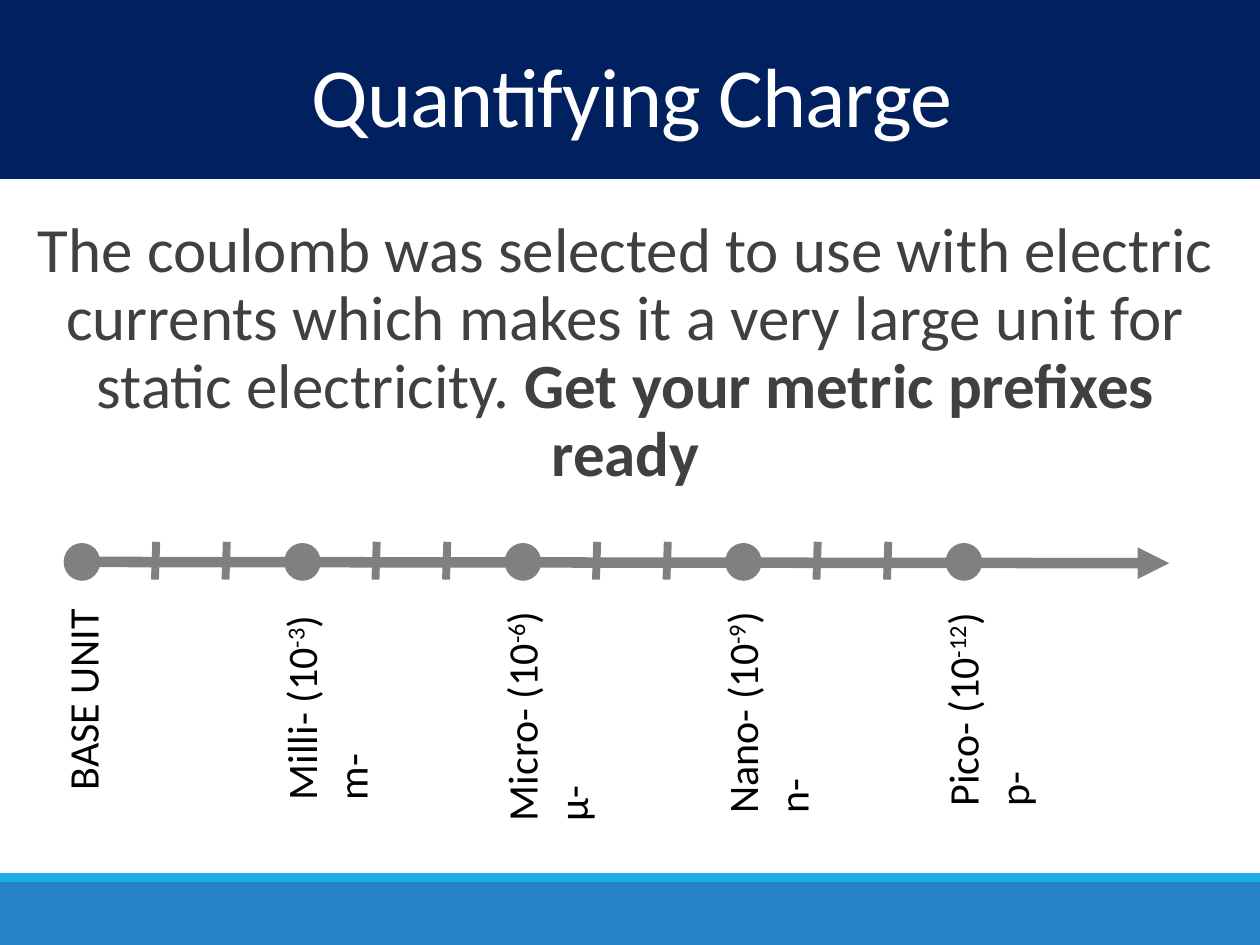
from lxml import etree
from pptx import Presentation
from pptx.dml.color import RGBColor
from pptx.enum.shapes import MSO_CONNECTOR, MSO_SHAPE
from pptx.enum.text import MSO_AUTO_SIZE, PP_ALIGN
from pptx.oxml.ns import qn
from pptx.util import Inches, Pt

RECT, OVAL = MSO_SHAPE.RECTANGLE, MSO_SHAPE.OVAL
LINE = MSO_CONNECTOR.STRAIGHT
CENTER = PP_ALIGN.CENTER
GROW = MSO_AUTO_SIZE.SHAPE_TO_FIT_TEXT

NAVY = RGBColor(0x00, 0x20, 0x60)
BLUE = RGBColor(0x26, 0x83, 0xC6)
CYAN = RGBColor(0x1C, 0xAD, 0xE4)
GRAY = RGBColor(0x80, 0x80, 0x80)
DARK = RGBColor(0x40, 0x40, 0x40)
BLACK = RGBColor(0x00, 0x00, 0x00)
WHITE = RGBColor(0xFF, 0xFF, 0xFF)

WIDE, HIGH = 10, 7.5
START, STEP = 0.65, 1.75      # first stop of the scale, gap between stops
AXIS = 4.46                   # height of the scale on the slide
DOT_W, DOT_H = 0.29, 0.3
TICKS = (0.58, 1.14)          # offsets of the ticks after each stop

# name, exponent, symbol, text length, middle of the label
UNITS = [
    ("Milli-", "-3", "m-", 1.68, 5.61),
    ("Micro-", "-6", "µ-", 1.89, 5.67),
    ("Nano-", "-9", "n-", 1.83, 5.64),
    ("Pico-", "-12", "p-", 1.78, 5.61),
]


def box(*sizes):
    return [Inches(size) for size in sizes]


def add_fill(slide, kind, color, *place):
    shape = slide.shapes.add_shape(kind, *box(*place))
    shape.shadow.inherit = False
    shape.fill.solid()
    shape.fill.fore_color.rgb = color
    shape.line.fill.background()


def add_line(slide, width, *ends):
    line = slide.shapes.add_connector(LINE, *box(*ends))
    line.line.color.rgb = GRAY
    line.line.width = Pt(width)
    etree.SubElement(line._element.spPr, qn("a:effectLst"))
    return line


def add_run(para, text, size, color, bold=None):
    run = para.add_run()
    run.text = text
    font = run.font
    font.name, font.size, font.bold = "Calibri", Pt(size), bold
    font.color.rgb = color
    return run


def add_text(slide, *place):
    shape = slide.shapes.add_textbox(*box(*place))
    shape.text_frame.word_wrap = True
    return shape


def add_title(slide):
    para = add_text(slide, 0.03, 0.42, 9.97, 0.84).text_frame.paragraphs[0]
    para.alignment, para.line_spacing = CENTER, 0.85
    run = add_run(para, "Quantifying Charge", 48, WHITE)
    run.font._element.set("spc", "-50")


def add_body(slide):
    frame = add_text(slide, 0.2, 1.68, 9.53, 1.47).text_frame
    frame.margin_left = frame.margin_right = 0
    para = frame.paragraphs[0]
    para.alignment, para.line_spacing = CENTER, 0.9
    para.space_before, para.space_after = Pt(12), Pt(2)
    add_run(para, "The coulomb was selected to use with electric currents "
            "which makes it a very large unit for static electricity. ",
            36, DARK)
    add_run(para, "Get your metric prefixes ready", 36, DARK, True)


def add_label(slide, mid_x, mid_y, width, height):
    """Add an upright label, given its middle and its size before turning."""
    shape = add_text(slide, mid_x - width / 2, mid_y - height / 2,
                     width, height)
    shape.rotation = 270
    frame = shape.text_frame
    frame.word_wrap = False
    frame.auto_size = GROW
    return frame


def add_unit(slide, stop, name, power, sign, width, mid):
    frame = add_label(slide, stop + 0.19, mid, width, 0.91)
    para = frame.paragraphs[0]
    add_run(para, f"{name} (10", 24, BLACK)
    high = add_run(para, power, 24, BLACK)
    high.font._element.set("baseline", "30000")
    add_run(para, ")", 24, BLACK)
    add_run(frame.add_paragraph(), sign, 24, BLACK)


def add_scale(slide):
    axis = add_line(slide, 6, START, AXIS, 9.28, AXIS + 0.01)
    etree.SubElement(axis.line._get_or_add_ln(), qn("a:tailEnd"),
                     type="triangle")
    stops = [START + STEP * i for i in range(len(UNITS) + 1)]
    for stop in stops:
        add_fill(slide, OVAL, GRAY, stop - DOT_W / 2, AXIS - DOT_H / 2,
                 DOT_W, DOT_H)
    for stop in stops[:-1]:
        for gap in TICKS:
            x = stop + gap
            add_line(slide, 4.5, x + 0.01, AXIS - 0.16, x, AXIS + 0.14)
    base = add_label(slide, START, 5.55, 1.64, 0.5)
    add_run(base.paragraphs[0], "BASE UNIT", 24, BLACK)
    for stop, unit in zip(stops[1:], UNITS):
        add_unit(slide, stop, *unit)


def main():
    deck = Presentation()
    deck.slide_width, deck.slide_height = box(WIDE, HIGH)
    slide = deck.slides.add_slide(deck.slide_layouts[6])
    add_fill(slide, RECT, BLUE, 0, 7, WIDE, 0.5)
    add_fill(slide, RECT, CYAN, 0, 6.93, WIDE, 0.07)
    add_fill(slide, RECT, NAVY, 0, 0, WIDE, 1.42)
    add_title(slide)
    add_body(slide)
    add_scale(slide)
    deck.save("out.pptx")


if __name__ == "__main__":
    main()
